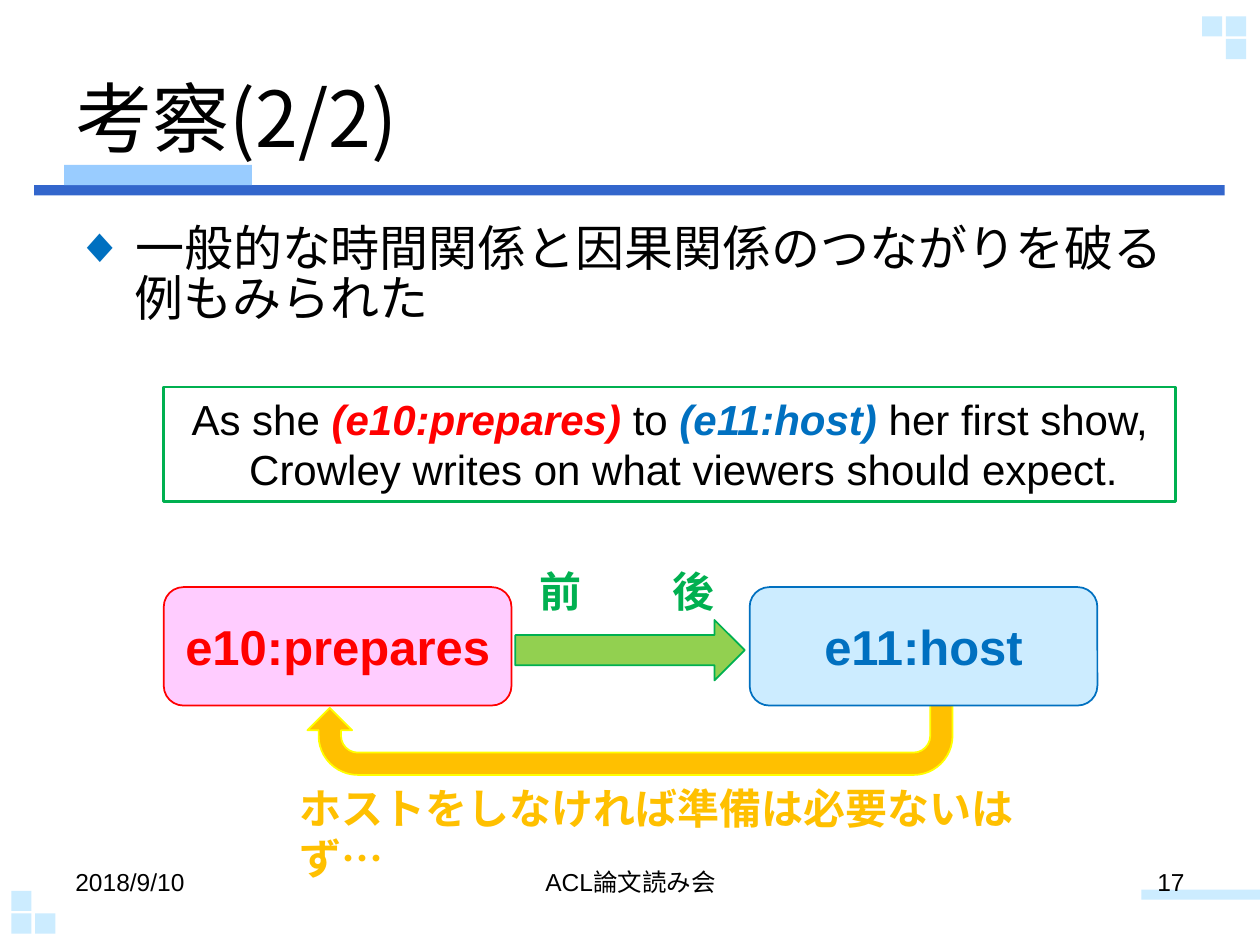
from dataclasses import dataclass

from lxml.etree import SubElement
from pptx import Presentation
from pptx.dml.color import RGBColor
from pptx.enum.shapes import MSO_SHAPE
from pptx.enum.text import MSO_ANCHOR, MSO_AUTO_SIZE, PP_ALIGN
from pptx.oxml.ns import qn
from pptx.util import Inches, Pt


@dataclass(frozen=True)
class Theme:
    latin: str = "Arial"
    cjk: str = "Noto Sans CJK JP"
    black: str = "000000"
    rule: str = "3366CC"
    tab: str = "99CCFF"
    pale: str = "CCECFF"
    red: str = "FF0000"
    pink: str = "FFCCFF"
    blue: str = "0070C0"
    green: str = "00B050"
    lime: str = "92D050"
    orange: str = "FFC000"
    yellow: str = "FFFF00"
    title: int = 44
    head: int = 28
    text: int = 24
    footer: int = 14


T = Theme()


def box(values):
    return [Inches(v) for v in values]


def add_run(p, text, size, color=T.black, font=T.latin, **formats):
    r = p.add_run()
    r.text = text
    formats = {"name": font, "size": Pt(size), **formats}
    for name, value in formats.items():
        setattr(r.font, name, value)
    r.font.color.rgb = RGBColor.from_string(color)
    SubElement(r._r.get_or_add_rPr(), qn("a:ea")).set("typeface", T.cjk)


def set_indent(p, inches):
    pPr = p._p.get_or_add_pPr()
    pPr.set("marL", str(Inches(inches)))
    pPr.set("indent", str(-Inches(inches)))
    return pPr


def set_bullet(p, char, color):
    pPr = set_indent(p, 0.38)
    clr = SubElement(pPr, qn("a:buClr"))
    SubElement(clr, qn("a:srgbClr")).set("val", color)
    SubElement(pPr, qn("a:buFont")).set("typeface", T.latin)
    SubElement(pPr, qn("a:buChar")).set("char", char)


def add_shape(s, kind, at, fill=None, line=None, width=1, rotation=0):
    sp = s.shapes.add_shape(kind, *box(at))
    sp.shadow.inherit = False
    sp.rotation = rotation
    if fill:
        sp.fill.solid()
        sp.fill.fore_color.rgb = RGBColor.from_string(fill)
    else:
        sp.fill.background()
    if line:
        sp.line.color.rgb = RGBColor.from_string(line)
        sp.line.width = Pt(width)
    else:
        sp.line.fill.background()
    return sp


def add_label(s, at, text, size, align=PP_ALIGN.LEFT, wrap=True, **formats):
    tf = s.shapes.add_textbox(*box(at)).text_frame
    tf.word_wrap = wrap
    p = tf.paragraphs[0]
    p.alignment = align
    add_run(p, text, size, **formats)


def add_event(s, left, text, color, fill):
    sp = add_shape(s, MSO_SHAPE.ROUNDED_RECTANGLE, (left, 4.66, 2.76, 0.94), fill, color)
    p = sp.text_frame.paragraphs[0]
    p.alignment = PP_ALIGN.CENTER
    add_run(p, text, T.head, color, bold=True)


def add_quote(s, at, parts):
    sp = add_shape(s, MSO_SHAPE.RECTANGLE, at, line=T.green, width=1.5)
    tf = sp.text_frame
    tf.vertical_anchor = MSO_ANCHOR.TOP
    p = tf.paragraphs[0]
    p.alignment = PP_ALIGN.CENTER
    set_indent(p, 0.31)
    for text, color in parts:
        marked = color != T.black
        add_run(p, text, T.text, color, bold=marked, italic=marked)


def add_decoration(s):
    bars = [
        ((0.27, 1.47, 9.45, 0.08), T.rule),
        ((0.51, 1.31, 1.49, 0.16), T.tab),
        ((9.06, 7.06, 0.94, 0.08), T.pale),
    ]
    corners = [(9.73, 0.13), (9.54, 0.13), (9.73, 0.31),
               (0.09, 7.25), (0.28, 7.25), (0.09, 7.07)]
    squares = [((x, y, 0.16, 0.16), T.pale) for x, y in corners]
    for at, fill in bars + squares:
        add_shape(s, MSO_SHAPE.RECTANGLE, at, fill)


def fill_placeholder(sp, at, anchor):
    sp.left, sp.top, sp.width, sp.height = box(at)
    tf = sp.text_frame
    tf.auto_size = MSO_AUTO_SIZE.NONE
    tf.vertical_anchor = anchor
    p = tf.paragraphs[0]
    p.alignment = PP_ALIGN.LEFT
    p.space_before = Pt(0)
    return p


def add_title_and_body(s):
    title, body = s.placeholders
    p = fill_placeholder(title, (0.5, 0.3, 9, 1.25), MSO_ANCHOR.MIDDLE)
    add_run(p, "考察(2/2)", T.title, font=T.cjk)
    p = fill_placeholder(body, (0.5, 1.75, 9, 4.95), MSO_ANCHOR.TOP)
    p.line_spacing = 0.85
    set_bullet(p, "◆", T.blue)
    add_run(p, " 一般的な時間関係と因果関係のつながりを破る", T.head, font=T.cjk)
    p.add_line_break()
    add_run(p, " 例もみられた", T.head, font=T.cjk)


def add_footer(s):
    for left, width, text, align in [
        (7.17, 2.33, "17", PP_ALIGN.RIGHT),
        (0.5, 2.33, "2018/9/10", PP_ALIGN.LEFT),
        (3.42, 3.17, "ACL論文読み会", PP_ALIGN.CENTER),
    ]:
        add_label(s, (left, 6.83, width, 0.52), text, T.footer, align)


def add_diagram(s):
    add_shape(s, MSO_SHAPE.U_TURN_ARROW, (2.44, 5.44, 5.12, 0.71),
              T.orange, T.yellow, rotation=180)
    add_quote(s, (1.3, 3.07, 8.03, 0.91), [
        ("As she ", T.black),
        ("(e10:prepares) ", T.red),
        ("to ", T.black),
        ("(e11:host) ", T.blue),
        ("her first show, Crowley writes on what viewers should expect. ", T.black),
    ])
    add_event(s, 1.3, "e10:prepares", T.red, T.pink)
    add_event(s, 5.95, "e11:host", T.blue, T.pale)
    for left, text in [(5.24, "後"), (4.18, "前")]:
        add_label(s, (left, 4.44, 0.54, 0.5), text, T.text, wrap=False,
                  color=T.green, font=T.cjk, bold=True)
    add_label(s, (2.28, 6.16, 6.18, 0.5), "ホストをしなければ準備は必要ないはず…",
              T.text, color=T.orange, bold=True)
    add_shape(s, MSO_SHAPE.RIGHT_ARROW, (4.09, 4.92, 1.82, 0.48), T.lime, T.green)


def main():
    prs = Presentation()
    prs.slide_width, prs.slide_height = box((10, 7.5))
    s = prs.slides.add_slide(prs.slide_layouts[1])
    add_decoration(s)
    add_title_and_body(s)
    add_footer(s)
    add_diagram(s)
    prs.save("out.pptx")


if __name__ == "__main__":
    main()
